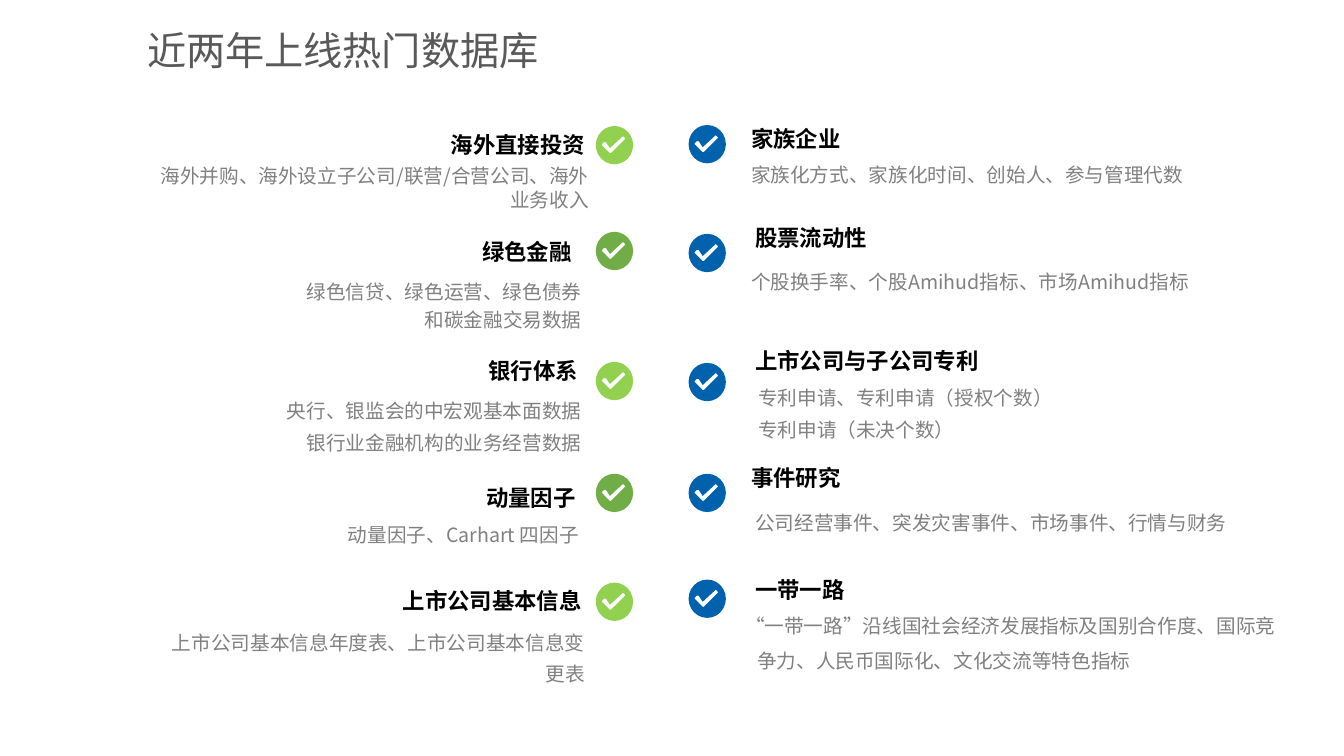
import pptx
import pptx.dml.color
import pptx.enum.text
import pptx.oxml.ns
import pptx.util
from pptx.util import Inches

FONT = "Noto Sans CJK SC"
BLUE, LIME, GREEN = "0061AD", "92D050", "70AD47"
BLACK, GRAY, TITLE_GRAY = "000000", "808080", "595959"
LEFT, RIGHT = pptx.enum.text.PP_ALIGN.LEFT, pptx.enum.text.PP_ALIGN.RIGHT
TOP, MIDDLE = pptx.enum.text.MSO_ANCHOR.TOP, pptx.enum.text.MSO_ANCHOR.MIDDLE
PT20, PT22 = pptx.util.Pt(20), pptx.util.Pt(22)

DISC_W, DISC_H = 0.37, 0.38
DISC = [(DISC_W, DISC_H / 2), (DISC_W / 2, DISC_H), (0, DISC_H / 2),
        (DISC_W / 2, 0), (DISC_W, DISC_H / 2)]
TICK = [(0.29, 0.12), (0.27, 0.1), (0.14, 0.22), (0.1, 0.16), (0.08, 0.16),
        (0.06, 0.18), (0.06, 0.19), (0.12, 0.25), (0.14, 0.27), (0.15, 0.27),
        (0.29, 0.13)]

LEFT_TOPICS = [
    (1.25, LIME, "海外直接投资", (3.7, 1.23, 2.15),
     ["海外并购、海外设立子公司/联营/合营公司、海外业务收入"],
     (1.46, 1.58, 4.43, 0.62), None),
    (2.3, GREEN, "绿色金融", (3.61, 2.3, 2.11),
     ["绿色信贷、绿色运营、绿色债券", "和碳金融交易数据"],
     (1.31, 2.73, 4.51, 0.65), None),
    (3.59, LIME, "银行体系", (3.63, 3.48, 2.15),
     ["央行、银监会的中宏观基本面数据", "银行业金融机构的业务经营数据"],
     (2.07, 3.86, 3.75, 0.91), PT20),
    (4.7, GREEN, "动量因子", (3.61, 4.74, 2.15),
     ["动量因子、Carhart 四因子"],
     (2.9, 5.14, 2.89, 0.61), None),
    (5.78, LIME, "上市公司基本信息", (2.48, 5.76, 3.34),
     ["上市公司基本信息年度表、上市公司基本信息变更表"],
     (1.57, 6.14, 4.28, 0.91), PT22),
]

RIGHT_TOPICS = [
    (1.24, BLUE, "家族企业", (7.4, 1.17, 3.18),
     ["家族化方式、家族化时间、创始人、参与管理代数"],
     (7.4, 1.49, 5.17, 0.65), PT22),
    (2.32, BLUE, "股票流动性", (7.44, 2.16, 3.59),
     ["个股换手率、个股Amihud指标、市场Amihud指标"],
     (7.4, 2.56, 5.34, 0.91), PT22),
    (3.6, BLUE, "上市公司与子公司专利", (7.44, 3.38, 3.45),
     ["专利申请、专利申请（授权个数）", "专利申请（未决个数）"],
     (7.47, 3.73, 4.1, 0.91), PT20),
    (4.7, BLUE, "事件研究", (7.4, 4.54, 2.15),
     ["公司经营事件、突发灾害事件、市场事件、行情与财务"],
     (7.44, 4.95, 5.34, 0.62), PT22),
    (5.75, BLUE, "一带一路", (7.44, 5.65, 2.15),
     ["“一带一路”沿线国社会经济发展指标及国别合作度、国际竞",
      "争力、人民币国际化、文化交流等特色指标"],
     (7.34, 5.97, 5.54, 0.91), PT22),
]


def rgb(value):
    return pptx.dml.color.RGBColor.from_string(value)


def add_text(s, lines, box, size=14, color=GRAY, bold=False, align=LEFT,
             anchor=TOP, spacing=None, inset=(0.05, 0.05), hang=0):
    tb = s.shapes.add_textbox(*map(Inches, box))
    tf = tb.text_frame
    tf.word_wrap = True
    tf.vertical_anchor = anchor
    tf.margin_left = tf.margin_right = Inches(inset[0])
    tf.margin_top = tf.margin_bottom = Inches(inset[1])
    for i, line in enumerate(lines):
        p = tf.paragraphs[0] if i == 0 else tf.add_paragraph()
        p.alignment = align
        if spacing:
            p.line_spacing = spacing
        if i:
            p.space_before = pptx.util.Pt(3)
            if hang:
                p._p.get_or_add_pPr().set("marL", str(Inches(hang)))
        r = p.add_run()
        r.text = line
        r.font.size = pptx.util.Pt(size)
        r.font.bold = bold
        r.font.name = FONT
        r.font.color.rgb = rgb(color)
        ea = r._r.get_or_add_rPr().makeelement(
            pptx.oxml.ns.qn("a:ea"), {"typeface": FONT})
        r.font._element.append(ea)


def round_disc(sp):
    qn = pptx.oxml.ns.qn
    radii = {"wR": str(Inches(DISC_W / 2)), "hR": str(Inches(DISC_H / 2))}
    edges = list(sp._element.iter(qn("a:lnTo")))[:4]
    for quarter, edge in enumerate(edges):
        arc = edge.makeelement(qn("a:arcTo"), {
            **radii, "stAng": str(quarter * 5400000), "swAng": "5400000"})
        edge.getparent().replace(edge, arc)


def add_check(s, left, top, color):
    disc, tick = ([(Inches(left + x), Inches(top + y)) for x, y in points]
                  for points in (DISC, TICK))
    outline = s.shapes.build_freeform(*disc[0])
    outline.add_line_segments(disc[1:], close=True)
    outline.move_to(*tick[0])
    outline.add_line_segments(tick[1:], close=True)
    sp = outline.convert_to_shape()
    round_disc(sp)
    sp.shadow.inherit = False
    sp.fill.solid()
    sp.fill.fore_color.rgb = rgb(color)
    sp.line.fill.background()


def add_topics(s, topics, check_left, align):
    for check_top, color, name, name_box, lines, box, spacing in topics:
        add_check(s, check_left, check_top, color)
        add_text(s, [name], (*name_box, 0.4), size=16, color=BLACK, bold=True,
                 align=align, anchor=MIDDLE)
        add_text(s, lines, box, align=align, spacing=spacing,
                 hang=0.12 if name == "一带一路" else 0)


def main():
    prs = pptx.Presentation()
    prs.slide_width, prs.slide_height = Inches(13.33), Inches(7.5)
    s = prs.slides.add_slide(prs.slide_layouts[6])
    add_text(s, ["近两年上线热门数据库"], (1.36, 0.26, 7.09, 0.53), size=28,
             color=TITLE_GRAY, spacing=0.9, inset=(0.1, 0.05))
    add_topics(s, LEFT_TOPICS, 5.91, RIGHT)
    add_topics(s, RIGHT_TOPICS, 6.83, LEFT)
    prs.save("out.pptx")


if __name__ == "__main__":
    main()
